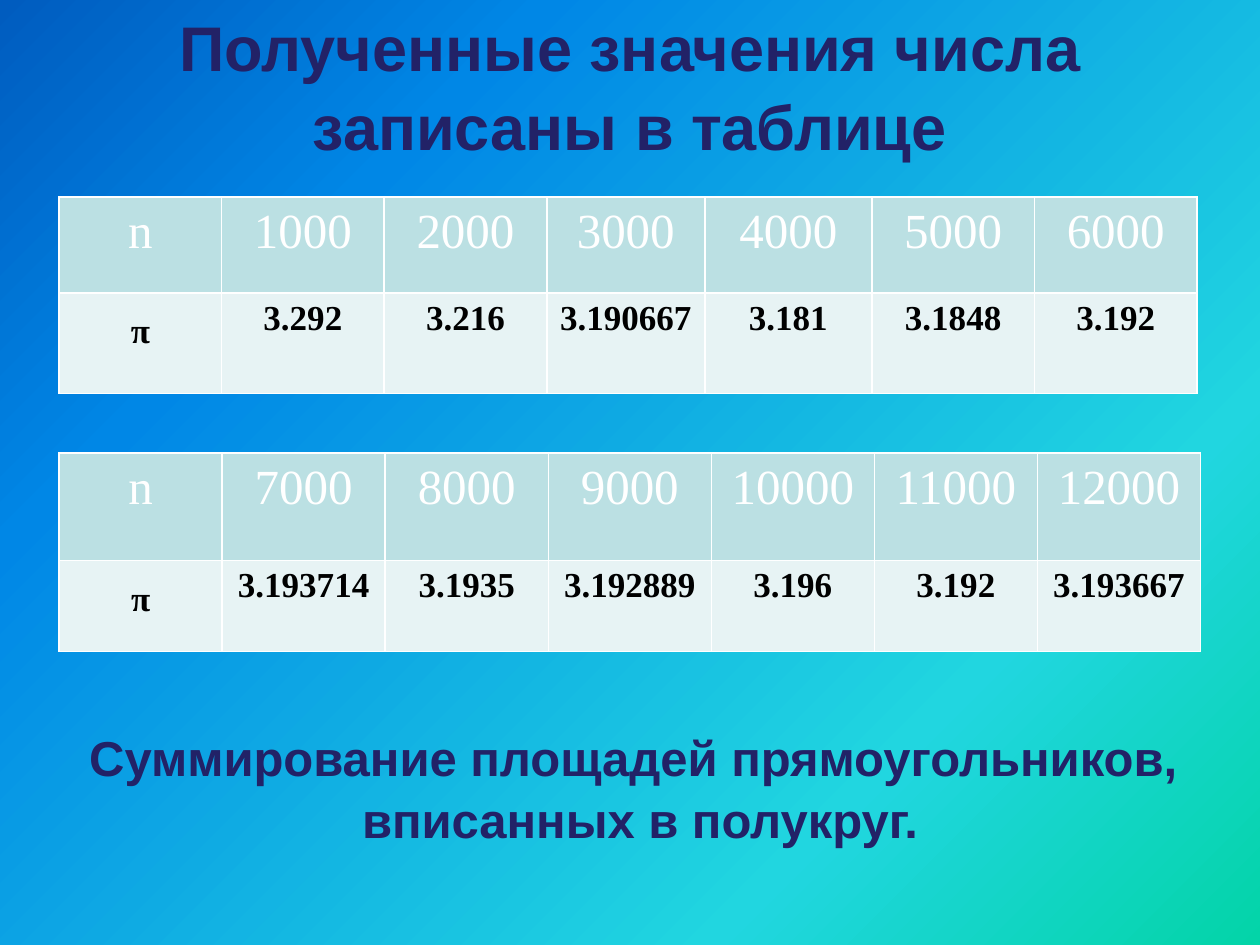
from lxml import etree
from pptx import Presentation
from pptx.dml.color import RGBColor
from pptx.enum.text import MSO_ANCHOR, MSO_AUTO_SIZE, PP_ALIGN
from pptx.oxml.ns import qn
from pptx.util import Pt

CENTER = PP_ALIGN.CENTER
MIDDLE = MSO_ANCHOR.MIDDLE
FIXED = MSO_AUTO_SIZE.NONE

THEME = {
    "sans": "Arial", "serif": "Times New Roman",
    "ink": "222267", "white": "FFFFFF", "black": "000000",
    "head": "BBE0E3", "body": "E7F3F4",
    "title": 36, "large": 28, "value": 20,
    "back": [(0, "03D4A8"), (25, "21D6E0"), (75, "0087E6"), (100, "005CBF")],
    "angle": 225, "lead": 1.05,
}

TITLE = "Полученные значения числа записаны в таблице"
NOTE = "Суммирование площадей прямоугольников, \vвписанных в полукруг."
LEFT = 33.75
TABLES = [
    {
        "top": 112.5,
        "cols": [92.9] * 3 + [90.3, 95.5] + [92.9] * 2,
        "rows": [54.9, 57.4],
        "data": [
            ["n", "1000", "2000", "3000", "4000", "5000", "6000"],
            ["π", "3.292", "3.216", "3.190667", "3.181", "3.1848", "3.192"],
        ],
    },
    {
        "top": 258.75,
        "cols": [93.2] * 7,
        "rows": [61.7, 52],
        "data": [
            ["n", "7000", "8000", "9000", "10000", "11000", "12000"],
            ["π", "3.193714", "3.1935", "3.192889", "3.196", "3.192", "3.193667"],
        ],
    },
]


def style(par, face, size, color, bold, lead):
    par.alignment = CENTER
    par.line_spacing = lead
    font = par.font
    font.name, font.size, font.bold = THEME[face], Pt(THEME[size]), bold
    font.color.rgb = RGBColor.from_string(THEME[color])


def add_color(parent, color):
    fill = etree.SubElement(parent, qn("a:solidFill"))
    etree.SubElement(fill, qn("a:srgbClr"), val=color)


def paint_back(slide):
    slide.background.fill.gradient()
    grad = slide.element.find(".//" + qn("a:gradFill"))
    for child in list(grad):
        grad.remove(child)
    stops = etree.SubElement(grad, qn("a:gsLst"))
    for pos, color in THEME["back"]:
        stop = etree.SubElement(stops, qn("a:gs"), pos=str(pos * 1000))
        etree.SubElement(stop, qn("a:srgbClr"), val=color)
    etree.SubElement(grad, qn("a:lin"), ang=str(THEME["angle"] * 60000), scaled="0")


def add_borders(cell):
    props = cell._tc.get_or_add_tcPr()
    for side in ("lnL", "lnR", "lnT", "lnB"):
        line = etree.SubElement(props, qn("a:" + side), w=str(Pt(1)))
        add_color(line, THEME["white"])


def fill_cell(cell, text, head, first):
    add_borders(cell)
    cell.fill.solid()
    cell.fill.fore_color.rgb = RGBColor.from_string(THEME["head" if head else "body"])
    cell.margin_left = cell.margin_right = Pt(5)
    cell.margin_top = cell.margin_bottom = 0
    cell.text = text
    size, color = ("large", "white") if head else ("value", "black")
    lead = 1.5 if first and not head else 1.15
    style(cell.text_frame.paragraphs[0], "serif", size, color, not head, lead)


def draw_table(slide, spec):
    cols, rows, data = spec["cols"], spec["rows"], spec["data"]
    frame = slide.shapes.add_table(len(rows), len(cols), Pt(LEFT), Pt(spec["top"]),
                                   Pt(sum(cols)), Pt(sum(rows)))
    table = frame.table
    table.first_row = table.horz_banding = False
    for col, width in zip(table.columns, cols):
        col.width = Pt(width)
    for r, (row, height) in enumerate(zip(table.rows, rows)):
        row.height = Pt(height)
        for c, text in enumerate(data[r]):
            fill_cell(table.cell(r, c), text, r == 0, c == 0)


def set_text(shape, text, size):
    frame = shape.text_frame
    frame.word_wrap = True
    frame.auto_size = FIXED
    frame.text = text
    style(frame.paragraphs[0], "sans", size, "ink", True, THEME["lead"])
    return frame


def main():
    deck = Presentation()
    deck.slide_width, deck.slide_height = Pt(720), Pt(540)
    slide = deck.slides.add_slide(deck.slide_layouts[5])
    paint_back(slide)

    title = slide.shapes.title
    title.left, title.top, title.width, title.height = Pt(36), Pt(9), Pt(648), Pt(78)
    set_text(title, TITLE, "title").vertical_anchor = MIDDLE

    for spec in TABLES:
        draw_table(slide, spec)

    note = slide.shapes.add_textbox(Pt(LEFT), Pt(410.5), Pt(664), Pt(97))
    set_text(note, NOTE, "large")

    deck.save("out.pptx")


if __name__ == "__main__":
    main()
